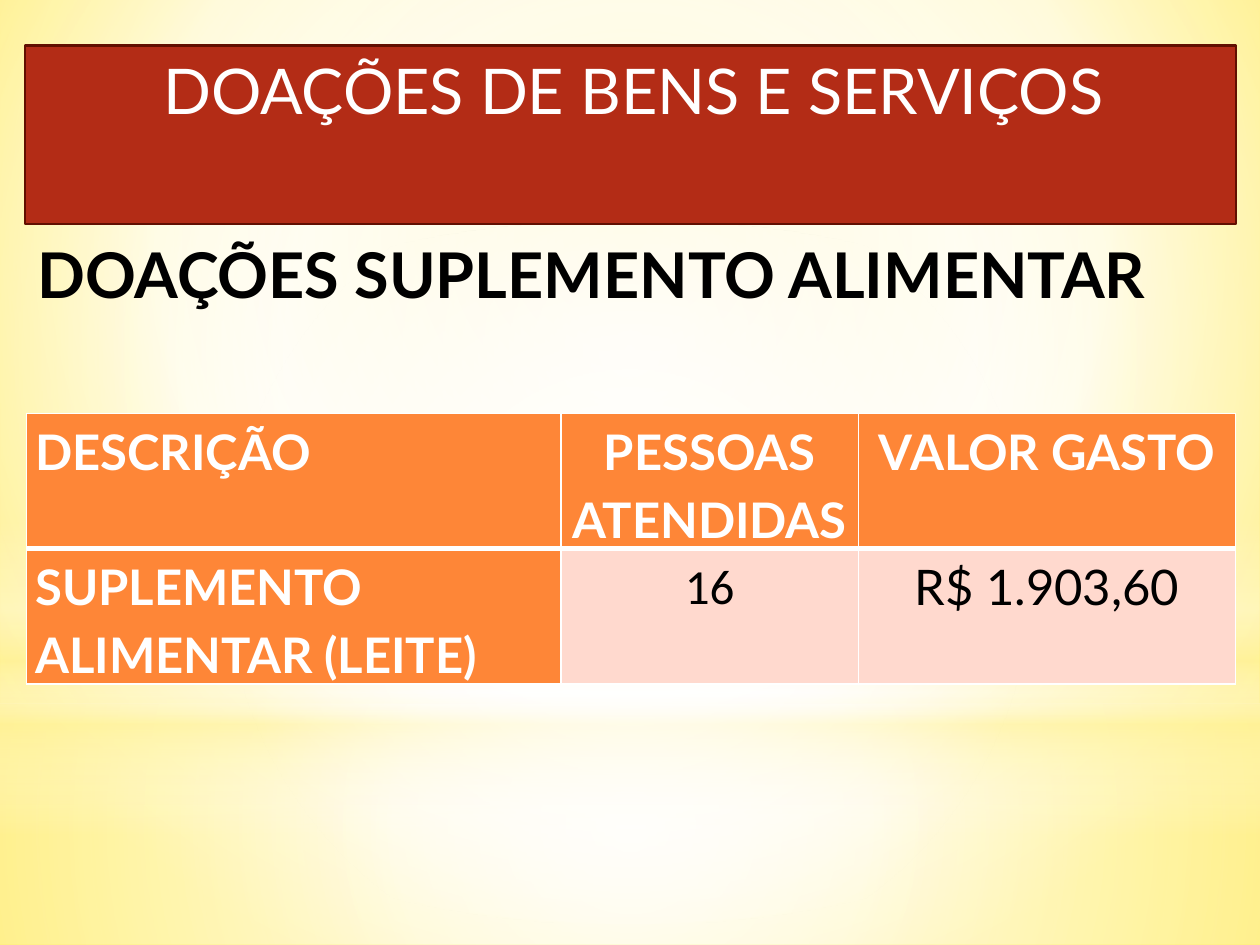
import pptx
import pptx.dml.color
import pptx.enum.shapes
import pptx.enum.text
import pptx.oxml
import pptx.oxml.ns
import pptx.util

Pt = pptx.util.Pt
qn = pptx.oxml.ns.qn
ALIGN = pptx.enum.text.PP_ALIGN
SHAPE = pptx.enum.shapes.MSO_SHAPE
WHITE, BLACK, YELLOW = "FFFFFF", "000000", "FFF39D"
ORANGE, PINK = "FE8637", "FFD9CE"
CENTER = (50, 50, 50, 50)


def color(value):
    return pptx.dml.color.RGBColor.from_string(value)


class SlideBuilder:
    font = "Lato"
    title_size = 36
    table_size = 28

    def __init__(self, presentation):
        self.slide = presentation.slides.add_slide(presentation.slide_layouts[6])

    def gradient(self, fill, element, stops, focus=None, angle=90):
        fill.gradient()
        old = next(element.iter(qn("a:gradFill")))
        stop_xml = "".join(
            f'<a:gs pos="{position * 1000}"><a:srgbClr val="{value}">'
            f'<a:alpha val="{opacity * 1000}"/></a:srgbClr></a:gs>'
            for position, value, opacity in stops
        )
        if focus:
            edges = " ".join(f'{side}="{value * 1000}"' for side, value in zip("ltrb", focus))
            shade = f'<a:path path="circle"><a:fillToRect {edges}/></a:path>'
        else:
            shade = f'<a:lin ang="{angle * 60000}" scaled="0"/>'
        new = pptx.oxml.parse_xml(
            f'<a:gradFill {pptx.oxml.ns.nsdecls("a")} rotWithShape="1">'
            f"<a:gsLst>{stop_xml}</a:gsLst>{shade}</a:gradFill>"
        )
        old.getparent().replace(old, new)

    def background(self, stops, focus):
        self.gradient(self.slide.background.fill, self.slide.element, stops, focus)

    def shape(self, kind, left, top, width, height):
        shape = self.slide.shapes.add_shape(kind, Pt(left), Pt(top), Pt(width), Pt(height))
        shape.shadow.inherit = False
        return shape

    def glow(self, kind, top, height, stops, focus=None):
        shape = self.shape(kind, 0, top, 720, height)
        shape.line.fill.background()
        self.gradient(shape.fill, shape.element, stops, focus)

    def set_text(self, text_frame, text, size, value, bold=False, align=ALIGN.LEFT, font=None):
        text_frame.text = text
        text_frame.word_wrap = True
        paragraph = text_frame.paragraphs[0]
        paragraph.alignment = align
        for run in paragraph.runs:
            run.font.name = font or self.font
            run.font.size = Pt(size)
            run.font.bold = bold
            run.font.color.rgb = color(value)
        return paragraph

    def banner(self, text, left, top, width, height, fill, line):
        shape = self.shape(SHAPE.RECTANGLE, left, top, width, height)
        shape.fill.solid()
        shape.fill.fore_color.rgb = color(fill)
        shape.line.color.rgb = color(line)
        shape.line.width = Pt(1.25)
        shape.text_frame.vertical_anchor = pptx.enum.text.MSO_ANCHOR.TOP
        paragraph = self.set_text(shape.text_frame, text, self.title_size, WHITE, align=ALIGN.CENTER)
        paragraph.space_before = Pt(7.2)
        paragraph.space_after = Pt(3)
        properties = paragraph._p.get_or_add_pPr()
        properties.set("marL", str(Pt(18)))
        properties.set("indent", str(Pt(-14.4)))

    def heading(self, text, left, top, width, height):
        box = self.slide.shapes.add_textbox(Pt(left), Pt(top), Pt(width), Pt(height))
        self.set_text(box.text_frame, text, self.title_size, BLACK, bold=True)

    def borders(self, cell, top, bottom):
        properties = cell._tc.get_or_add_tcPr()
        widths = {"lnL": 1, "lnR": 1, "lnT": top, "lnB": bottom}
        for index, (tag, width) in enumerate(widths.items()):
            properties.insert(index, pptx.oxml.parse_xml(
                f'<a:{tag} {pptx.oxml.ns.nsdecls("a")} w="{Pt(width)}">'
                f'<a:solidFill><a:srgbClr val="{WHITE}"/></a:solidFill></a:{tag}>'
            ))

    def table(self, rows, left, top, widths, row_height):
        frame = self.slide.shapes.add_table(
            len(rows), len(widths), Pt(left), Pt(top), Pt(sum(widths)), Pt(row_height * len(rows)))
        table = frame.table
        for column, width in zip(table.columns, widths):
            column.width = Pt(width)
        for row_index, row in enumerate(rows):
            table.rows[row_index].height = Pt(row_height)
            for column_index, (text, align, font) in enumerate(row):
                cell = table.cell(row_index, column_index)
                label = row_index == 0 or column_index == 0
                cell.margin_left = cell.margin_right = Pt(5)
                cell.margin_top = cell.margin_bottom = 0
                cell.fill.solid()
                cell.fill.fore_color.rgb = color(ORANGE if label else PINK)
                paragraph = self.set_text(cell.text_frame, text, self.table_size,
                                          WHITE if label else BLACK, label, align, font)
                paragraph.line_spacing = 1.15
                self.borders(cell, 3 if row_index else 1, 1 if row_index else 3)


def main():
    presentation = pptx.Presentation()
    presentation.slide_width, presentation.slide_height = Pt(720), Pt(540)
    builder = SlideBuilder(presentation)
    builder.background(
        [(0, "FFF18D", 100), (60, WHITE, 100), (100, "FFE94E", 100)], (20, 10, 20, 60))
    builder.glow(SHAPE.RECTANGLE, 401.8, 138.2,
                 [(0, WHITE, 91), (37, WHITE, 76), (100, YELLOW, 79)], CENTER)
    builder.glow(SHAPE.RECTANGLE, 0, 401.8,
                 [(0, WHITE, 89), (48, WHITE, 62), (100, YELLOW, 79)], CENTER)
    builder.glow(SHAPE.RECTANGLE, 296.6, 180,
                 [(0, WHITE, 0), (29, WHITE, 30), (45, YELLOW, 40),
                  (55, WHITE, 26), (65, YELLOW, 60), (100, WHITE, 0)])
    builder.glow(SHAPE.OVAL, 126, 401.8, [(0, WHITE, 100), (56, WHITE, 0)], CENTER)
    builder.banner("DOAÇÕES DE BENS E SERVIÇOS", 14.2, 26, 692, 102, "B32C16", "610F01")
    builder.heading("DOAÇÕES SUPLEMENTO ALIMENTAR", 14.2, 131, 692, 51)
    builder.table(
        [
            [("DESCRIÇÃO", ALIGN.LEFT, None),
             ("PESSOAS ATENDIDAS", ALIGN.CENTER, None),
             ("VALOR GASTO", ALIGN.CENTER, None)],
            [("SUPLEMENTO ALIMENTAR (LEITE)", ALIGN.JUSTIFY, None),
             ("16", ALIGN.CENTER, "Calibri"),
             ("R$ 1.903,60", ALIGN.CENTER, None)],
        ],
        15.2, 236.2, [305.3, 170, 215.5], 77.3)
    presentation.save("out.pptx")


if __name__ == "__main__":
    main()
